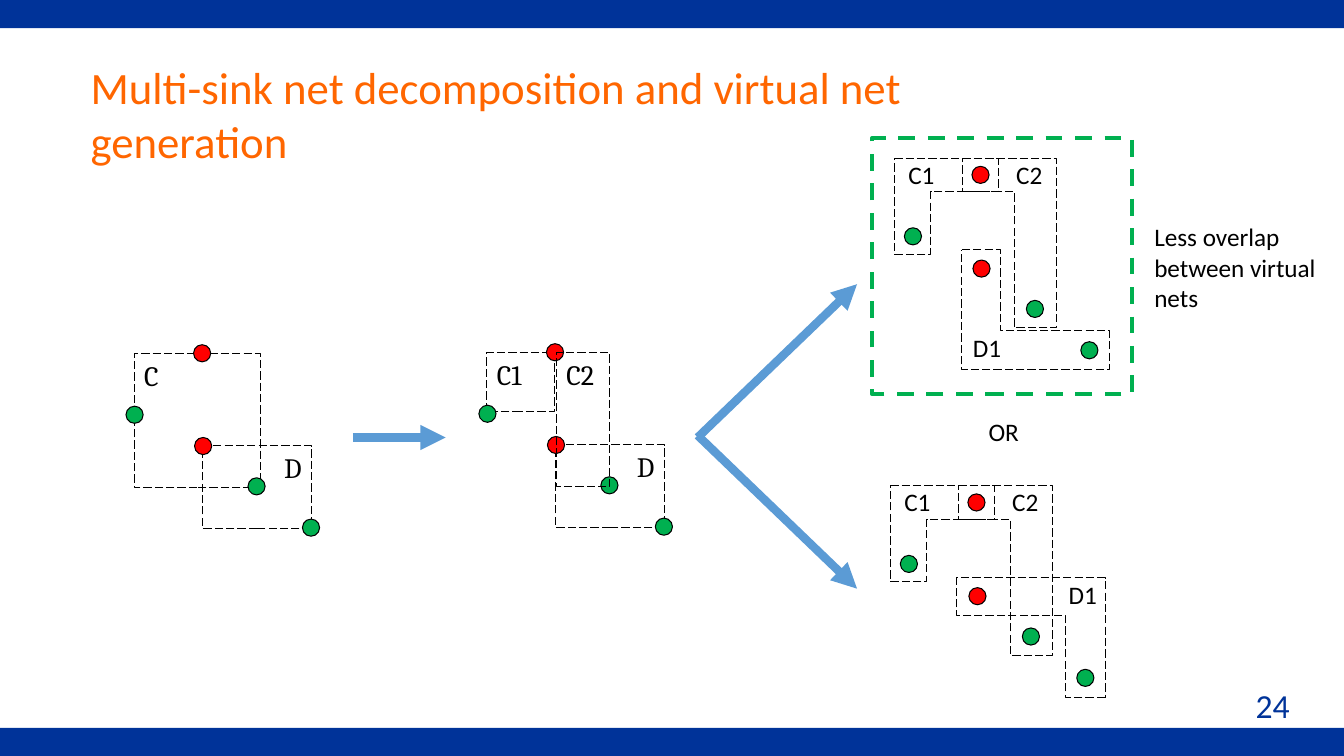
from lxml import etree
from pptx import Presentation
from pptx.dml.color import RGBColor
from pptx.enum.dml import MSO_LINE
from pptx.enum.shapes import MSO_CONNECTOR, MSO_SHAPE
from pptx.enum.text import MSO_ANCHOR, PP_ALIGN
from pptx.oxml.ns import qn
from pptx.util import Inches, Pt

RECTANGLE, OVAL = MSO_SHAPE.RECTANGLE, MSO_SHAPE.OVAL
STRAIGHT = MSO_CONNECTOR.STRAIGHT
LONG_DASH, DASH = MSO_LINE.LONG_DASH, MSO_LINE.DASH
LEFT, CENTER, RIGHT = PP_ALIGN.LEFT, PP_ALIGN.CENTER, PP_ALIGN.RIGHT
TOP, MIDDLE = MSO_ANCHOR.TOP, MSO_ANCHOR.MIDDLE

COLORS = {
    "bar": "003399",
    "title": "FF6600",
    "text": "000000",
    "source": "FF0000",
    "sink": "00B050",
    "arrow": "5B9BD5",
}
SLIDE_WIDTH, SLIDE_HEIGHT, BAR_HEIGHT = 13.33, 7.5, 0.28
DOT_SIZE = 0.17

NET_DOTS = [
    ("sink", 1.75, 1.73), ("source", 0.67, 0), ("sink", 0, 0.61),
    ("sink", 1.21, 1.32), ("source", 0.68, 0.92),
]
VIRTUAL_DOTS = [
    ("sink", 1.85, 1.82), ("source", 0.77, 0.08), ("sink", 0.1, 0.69),
    ("sink", 1.31, 1.41), ("source", 0.78, 1.01),
]
C1_OUTLINE = [(0, 0), (1.03, 0), (1.03, 0.33), (0.36, 0.33), (0.36, 0.95), (0, 0.95)]
C2_OUTLINE = [(0.68, 0), (1.61, 0), (1.61, 1.68), (1.19, 1.68), (1.19, 0.33), (0.68, 0.33)]
D1_DOWN_FIRST = [(0.67, 0.91), (1.05, 0.91), (1.05, 1.71), (2.13, 1.71), (2.13, 2.1), (0.67, 2.1)]
D1_ACROSS_FIRST = [(2.13, 2.1), (1.74, 2.1), (1.74, 1.29), (0.66, 1.29), (0.66, 0.91), (2.13, 0.91)]


def rgb(name):
    """Return the named colour."""
    return RGBColor.from_string(COLORS[name])


def write_text(shape, text, size=18, font="Calibri", color="text", align=LEFT, anchor=TOP):
    """Write one formatted paragraph into a shape."""
    frame = shape.text_frame
    frame.word_wrap = True
    frame.vertical_anchor = anchor
    paragraph = frame.paragraphs[0]
    paragraph.alignment = align
    run = paragraph.add_run()
    run.text = text
    run.font.size = Pt(size)
    run.font.name = font
    run.font.color.rgb = rgb(color)


def add_label(container, box, text, **text_format):
    """Add a text box with one paragraph."""
    label = container.shapes.add_textbox(*map(Inches, box))
    write_text(label, text, **text_format)


def style_shape(shape, fill=None, line=None, width=0.75, dash=None):
    """Set fill, outline and shadow of a shape."""
    shape.shadow.inherit = False
    if fill:
        shape.fill.solid()
        shape.fill.fore_color.rgb = rgb(fill)
    else:
        shape.fill.background()
    if line:
        shape.line.color.rgb = rgb(line)
        shape.line.width = Pt(width)
        shape.line.dash_style = dash
    else:
        shape.line.fill.background()


def add_preset(container, kind, box, **style):
    """Add a styled preset shape."""
    shape = container.shapes.add_shape(kind, *map(Inches, box))
    style_shape(shape, **style)
    return shape


def add_dots(container, left, top, dots):
    """Place source and sink pins relative to a corner."""
    for color, x, y in dots:
        add_preset(container, OVAL, (left + x, top + y, DOT_SIZE, DOT_SIZE), fill=color, line="text")


def add_net_box(container, left, top, box, text, align=LEFT):
    """Add a dashed, labelled bounding box of a net."""
    x, y, width, height = box
    shape = add_preset(container, RECTANGLE, (left + x, top + y, width, height), line="text", dash=LONG_DASH)
    write_text(shape, text, size=20, font="Cambria", align=align)


def add_outline(container, left, top, points):
    """Add a dashed closed outline relative to a corner."""
    corners = [(Inches(left + x), Inches(top + y)) for x, y in points]
    builder = container.shapes.build_freeform(*corners[0], scale=1.0)
    builder.add_line_segments(corners[1:], close=True)
    style_shape(builder.convert_to_shape(), line="text", dash=LONG_DASH)


def add_nets(slide, left, top, back_boxes, front_boxes=()):
    """Draw net boxes around the shared pins."""
    group = slide.shapes.add_group_shape()
    for text, box in back_boxes:
        add_net_box(group, left, top, box, text)
    add_net_box(group, left, top, (0.76, 1, 1.08, 0.82), "D", align=RIGHT)
    add_dots(group, left, top, NET_DOTS)
    for text, box in front_boxes:
        add_net_box(group, left, top, box, text)


def add_virtual_nets(slide, left, top, d1_outline, d1_label):
    """Draw virtual nets C1, C2 and one variant of D1."""
    group = slide.shapes.add_group_shape()
    add_dots(group, left, top, VIRTUAL_DOTS)
    for points in (C1_OUTLINE, C2_OUTLINE, d1_outline):
        add_outline(group, left, top, points)
    for text, (x, y) in (("D1", d1_label), ("C1", (0.04, -0.04)), ("C2", (1.11, -0.04))):
        add_label(group, (left + x, top + y, 0.52, 0.42), text)


def add_arrow(slide, start, end):
    """Add a thick arrow between two points."""
    arrow = slide.shapes.add_connector(STRAIGHT, *map(Inches, start + end))
    arrow.line.color.rgb = rgb("arrow")
    arrow.line.width = Pt(6)
    etree.SubElement(arrow.line._get_or_add_ln(), qn("a:tailEnd"), type="triangle")
    etree.SubElement(arrow._element.spPr, qn("a:effectLst"))


def add_frame(slide):
    """Add the bars, title and page number."""
    for top in (SLIDE_HEIGHT - BAR_HEIGHT, 0):
        add_preset(slide, RECTANGLE, (0, top, SLIDE_WIDTH, BAR_HEIGHT), fill="bar")
    add_label(slide, (0.8, 0.5, 9.51, 1.25), "Multi-sink net decomposition and virtual net generation",
              size=32, color="title", anchor=MIDDLE)
    add_label(slide, (10.11, 6.75, 2.78, 0.5), "24", size=24, color="bar", align=RIGHT)


def add_choice(slide, left, top):
    """Add the two alternatives and mark the better one."""
    add_label(slide, (left + 0.86, top + 2.71, 0.89, 0.4), "OR", align=CENTER)
    add_virtual_nets(slide, left + 0.18, top + 3.45, D1_ACROSS_FIRST, (1.67, 0.88))
    add_virtual_nets(slide, left + 0.22, top + 0.2, D1_DOWN_FIRST, (0.68, 1.68))
    add_preset(slide, RECTANGLE, (left, top, 2.58, 2.54), line="sink", width=3, dash=DASH)
    add_label(slide, (left + 2.7, top + 0.78, 1.83, 1.01), "Less overlap between virtual nets")


def main():
    """Build and save the slide."""
    presentation = Presentation()
    presentation.slide_width = Inches(SLIDE_WIDTH)
    presentation.slide_height = Inches(SLIDE_HEIGHT)
    slide = presentation.slides.add_slide(presentation.slide_layouts[6])
    add_frame(slide)
    add_nets(slide, 1.25, 3.42, [("C", (0.08, 0.09, 1.25, 1.33))])
    add_nets(slide, 4.75, 3.41, [("C1", (0.08, 0.09, 0.67, 0.58))],
             [("C2", (0.77, 0.09, 0.53, 1.33))])
    add_arrow(slide, (3.5, 4.34), (4.42, 4.34))
    add_arrow(slide, (6.92, 4.34), (8.5, 2.82))
    add_arrow(slide, (6.92, 4.32), (8.5, 5.84))
    add_choice(slide, 8.65, 1.37)
    presentation.save("out.pptx")


if __name__ == "__main__":
    main()
